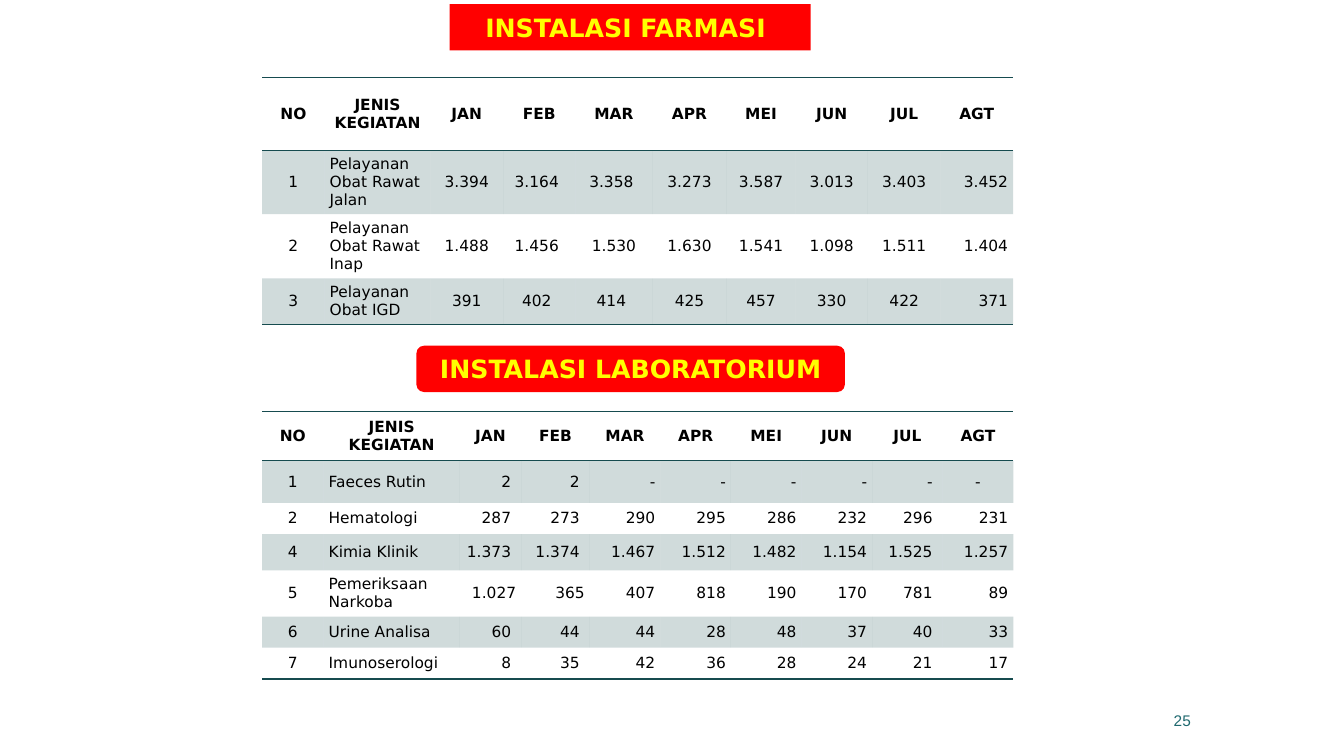
from dataclasses import dataclass, field

import lxml.etree
import pptx
import pptx.dml.color
import pptx.enum.shapes
import pptx.enum.text
import pptx.oxml
import pptx.oxml.ns
import pptx.util

Inches = pptx.util.Inches
Pt = pptx.util.Pt
RGBColor = pptx.dml.color.RGBColor
Align = pptx.enum.text.PP_ALIGN
Anchor = pptx.enum.text.MSO_ANCHOR
qn = pptx.oxml.ns.qn

RED = RGBColor(0xFF, 0x00, 0x00)
YELLOW = RGBColor(0xFF, 0xFF, 0x00)
BLACK = RGBColor(0x00, 0x00, 0x00)
TEAL = RGBColor(0x16, 0x4B, 0x4F)
AQUA = RGBColor(0x1F, 0x69, 0x6F)
SANS = "DejaVu Sans"
PLAIN = "{2D5ABB26-0587-4C30-8999-92F81FD0307C}"
MONTHS = ["JAN", "FEB", "MAR", "APR", "MEI", "JUN", "JUL", "AGT"]
HEADER = ["NO", "JENIS KEGIATAN"] + MONTHS
PAD = 0.05


@dataclass
class Style:
    align: Align
    right: float = PAD


MID = Style(Align.CENTER)
LEFT = Style(Align.LEFT)
END = Style(Align.RIGHT)
INSET = Style(Align.RIGHT, 0.1)
SHIFT = Style(Align.CENTER, 0.1)


@dataclass
class Banner:
    text: str
    left: float
    top: float
    width: float
    right: float = 0.1


@dataclass
class Grid:
    top: float
    widths: list[float]
    heights: list[float]
    rows: list[list[str]]
    styles: list[Style]
    odd: dict[tuple[int, int], Style] = field(default_factory=dict)


DRUGS = Grid(
    0.77,
    [0.62, 1.05, 0.72, 0.72, 0.76, 0.74, 0.68, 0.72, 0.72, 0.72],
    [0.72, 0.45, 0.5, 0.42],
    [
        ["1", "Pelayanan Obat Rawat Jalan", "3.394", "3.164", "3.358", "3.273", "3.587", "3.013", "3.403", "3.452"],
        ["2", "Pelayanan Obat Rawat Inap", "1.488", "1.456", "1.530", "1.630", "1.541", "1.098", "1.511", "1.404"],
        ["3", "Pelayanan Obat IGD", "391", "402", "414", "425", "457", "330", "422", "371"],
    ],
    [MID, LEFT, MID, SHIFT, SHIFT, MID, MID, MID, MID, END],
    {(2, 4): MID},
)
LAB = Grid(
    4.08,
    [0.61, 1.35, 0.61, 0.68] + [0.7] * 6,
    [0.49, 0.42, 0.31, 0.36, 0.45, 0.31, 0.31],
    [
        ["1", "Faeces Rutin", "2", "2", "-", "-", "-", "-", "-", "-"],
        ["2", "Hematologi", "287", "273", "290", "295", "286", "232", "296", "231"],
        ["4", "Kimia Klinik", "1.373", "1.374", "1.467", "1.512", "1.482", "1.154", "1.525", "1.257"],
        ["5", "Pemeriksaan Narkoba", "1.027", "365", "407", "818", "190", "170", "781", "89"],
        ["6", "Urine Analisa", "60", "44", "44", "28", "48", "37", "40", "33"],
        ["7", "Imunoserologi", "8", "35", "42", "36", "28", "24", "21", "17"],
    ],
    [MID, LEFT, INSET, INSET, END, END, END, END, INSET, END],
    {(1, 9): MID, (4, 2): END, (4, 3): END},
)


def write(frame, text: str, align: Align, size: float, color: RGBColor,
          bold: bool = False, face: str = SANS) -> None:
    frame.text = text
    line = frame.paragraphs[0]
    line.alignment = align
    font = line.runs[0].font
    font.name, font.size, font.bold = face, Pt(size), bold
    font.color.rgb = color


def rule(cell, sides: list[str]) -> None:
    props = cell._tc.get_or_add_tcPr()
    for spot, side in enumerate(sides):
        edge = lxml.etree.Element(qn(f"a:{side}"), w=str(Pt(1)))
        fill = lxml.etree.SubElement(edge, qn("a:solidFill"))
        lxml.etree.SubElement(fill, qn("a:srgbClr"), val=str(TEAL))
        props.insert(spot, edge)


def shade(cell) -> None:
    cell.fill.solid()
    cell.fill.fore_color.rgb = TEAL
    tint = cell._tc.tcPr.find(".//" + qn("a:srgbClr"))
    lxml.etree.SubElement(tint, qn("a:alpha"), val="20000")


def draw_grid(slide, grid: Grid) -> None:
    lines = [HEADER] + grid.rows
    frame = slide.shapes.add_table(
        len(lines), len(HEADER), Inches(2.6), Inches(grid.top),
        Inches(sum(grid.widths)), Inches(sum(grid.heights)))
    table = frame.table
    table.horz_banding = False
    table._tbl.tblPr.find(qn("a:tableStyleId")).text = PLAIN
    for column, width in zip(table.columns, grid.widths):
        column.width = Inches(width)
    for row, height in zip(table.rows, grid.heights):
        row.height = Inches(height)
    for r, line in enumerate(lines):
        for c, text in enumerate(line):
            cell = table.cell(r, c)
            style = grid.odd.get((r, c), grid.styles[c]) if r else MID
            cell.margin_left = cell.margin_top = cell.margin_bottom = Inches(PAD)
            cell.margin_right = Inches(style.right)
            cell.vertical_anchor = Anchor.MIDDLE
            write(cell.text_frame, text, style.align, 11, BLACK, r == 0)
            if r % 2:
                shade(cell)
            else:
                cell.fill.background()
            if r == 0:
                rule(cell, ["lnT", "lnB"])
            elif r == len(grid.rows):
                rule(cell, ["lnB"])


def draw_banner(shape, banner: Banner) -> None:
    shape.left, shape.top = Inches(banner.left), Inches(banner.top)
    shape.width, shape.height = Inches(banner.width), Inches(0.46)
    shape.fill.solid()
    shape.fill.fore_color.rgb = RED
    shape.line.fill.background()
    frame = shape.text_frame
    frame.word_wrap = True
    frame.auto_size = pptx.enum.text.MSO_AUTO_SIZE.NONE
    frame.vertical_anchor = Anchor.MIDDLE
    frame.margin_right = Inches(banner.right)
    write(frame, banner.text, Align.CENTER, 18, YELLOW, True)


def main() -> None:
    deck = pptx.Presentation()
    deck.slide_width, deck.slide_height = Inches(13.33), Inches(7.5)
    slide = deck.slides.add_slide(deck.slide_layouts[5])

    title = slide.shapes.title
    draw_banner(title, Banner("INSTALASI FARMASI", 4.46, 0.04, 3.58, 0.19))
    shell = lxml.etree.Element(qn("a:prstGeom"), prst="roundRect")
    lxml.etree.SubElement(shell, qn("a:avLst"))
    title._element.spPr.insert(1, shell)
    draw_grid(slide, DRUGS)

    round_box = pptx.enum.shapes.MSO_SHAPE.ROUNDED_RECTANGLE
    label = slide.shapes.add_shape(round_box, 0, 0, 0, 0)
    label.shadow.inherit = False
    draw_banner(label, Banner("INSTALASI LABORATORIUM", 4.13, 3.43, 4.25))
    draw_grid(slide, LAB)

    page = slide.shapes.add_textbox(Inches(8.8), Inches(6.95), Inches(3.11), Inches(0.4))
    page.text_frame.word_wrap = True
    page.text_frame.vertical_anchor = Anchor.MIDDLE
    write(page.text_frame, "25", Align.RIGHT, 11, AQUA, face="Arial")
    deck.save("out.pptx")


if __name__ == "__main__":
    main()
